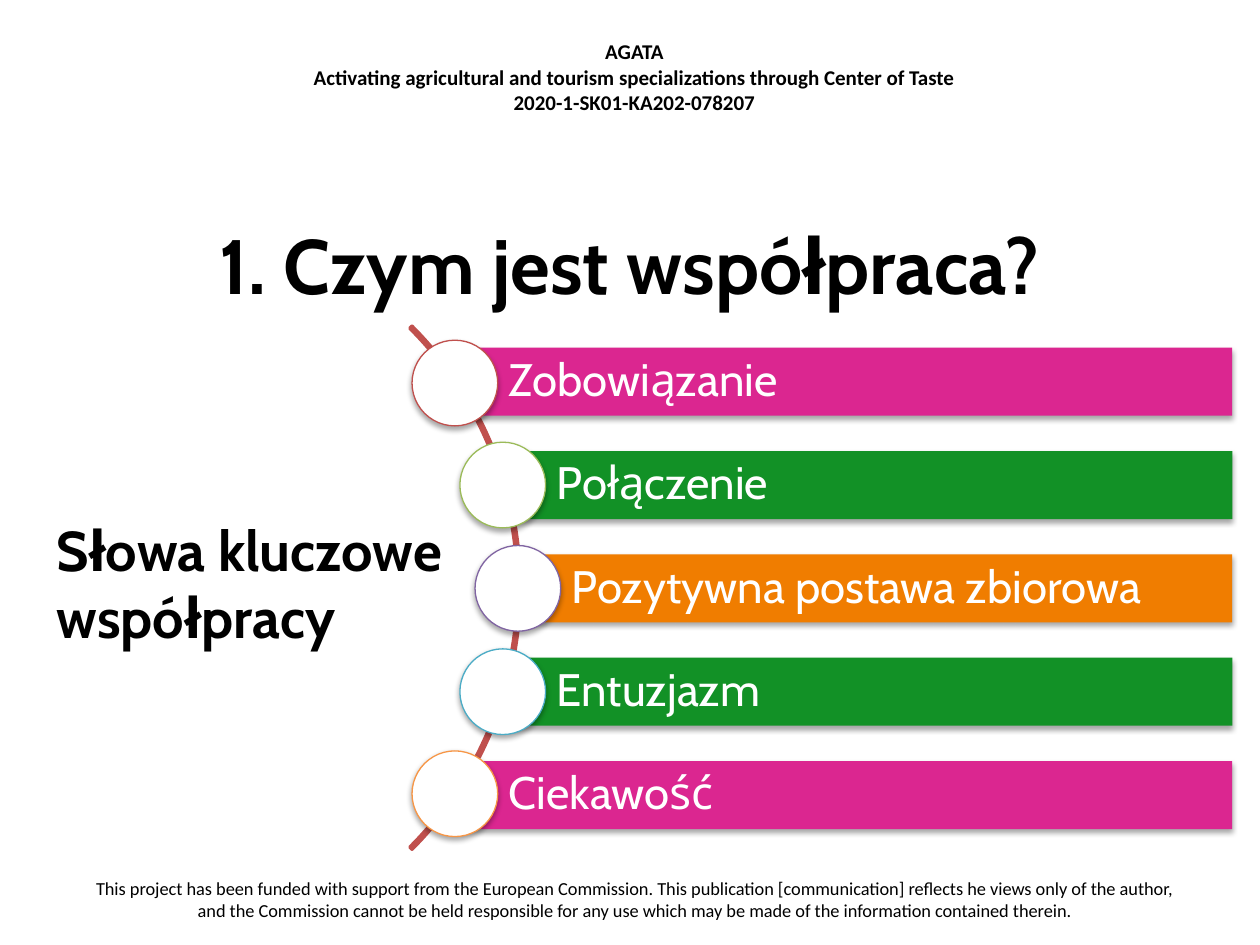
from dataclasses import dataclass
from math import sqrt

from lxml.etree import SubElement
from pptx import Presentation
from pptx.dml.color import RGBColor as Rgb
from pptx.enum.shapes import MSO_SHAPE as Shape
from pptx.enum.text import MSO_ANCHOR as Anchor, PP_ALIGN as Align
from pptx.oxml.ns import qn
from pptx.util import Pt

PX = 9144


@dataclass(frozen=True)
class Theme:
    black: str = "000000"
    white: str = "FFFFFF"
    red: str = "C0504D"
    pink: str = "DB2690"
    green: str = "129126"
    orange: str = "F07D00"
    lime: str = "9BBB59"
    purple: str = "8064A2"
    aqua: str = "4BACC6"
    apricot: str = "F79646"
    heading_font: str = "Cabin"
    project_font: str = "Calibri"
    title: float = 44
    subtitle: float = 32
    keyword: float = 26
    project: float = 12
    funding: float = 10.5


class KeywordSlide:
    def __init__(self, deck, theme):
        self.theme = theme
        self.slide = deck.slides.add_slide(deck.slide_layouts[5])

    def box(self, *lengths):
        return [round(length) * PX for length in lengths]

    def fill_text(self, frame, lines, size, font, color, bold=False,
                  align=Align.LEFT, anchor=Anchor.TOP, spacing=1.0):
        frame.word_wrap = True
        frame.vertical_anchor = anchor
        frame.text = "\n".join(lines)
        style = {"size": Pt(size), "name": font, "bold": bold}
        for paragraph in frame.paragraphs:
            paragraph.alignment = align
            paragraph.line_spacing = spacing
            for key, value in style.items():
                setattr(paragraph.font, key, value)
            paragraph.font.color.rgb = Rgb.from_string(color)

    def title(self, place, text):
        heading = self.slide.shapes.title
        for key, value in zip(("left", "top", "width", "height"), self.box(*place)):
            setattr(heading, key, value)
        self.fill_text(heading.text_frame, [text], self.theme.title,
                       self.theme.heading_font, self.theme.black, True,
                       Align.CENTER, Anchor.MIDDLE)

    def text(self, place, lines, size, font, **style):
        note = self.slide.shapes.add_textbox(*self.box(*place))
        self.fill_text(note.text_frame, lines, size, font, self.theme.black, **style)

    def shape(self, kind, place, fill=None, line=None, weight=0.75):
        figure = self.slide.shapes.add_shape(kind, *self.box(*place))
        figure.shadow.inherit = False
        if fill:
            figure.fill.solid()
            figure.fill.fore_color.rgb = Rgb.from_string(fill)
        else:
            figure.fill.background()
        if line:
            figure.line.color.rgb = Rgb.from_string(line)
            figure.line.width = Pt(weight)
        else:
            figure.line.fill.background()
        return figure

    def shade(self, figure):
        effects = figure.element.spPr.find(qn("a:effectLst"))
        shadow = SubElement(effects, qn("a:outerShdw"), blurRad="40000",
                            dist="23000", dir="5400000", rotWithShape="0")
        color = SubElement(shadow, qn("a:srgbClr"), val=self.theme.black)
        SubElement(color, qn("a:alpha"), val="35000")

    def arc(self, place):
        curve = self.shape(Shape.BLOCK_ARC, place, line=self.theme.red, weight=2)
        for index, value in enumerate((189, 27, 0.004)):
            curve.adjustments[index] = value

    def bar(self, place, text, fill):
        band = self.shape(Shape.RECTANGLE, place, fill)
        self.shade(band)
        margins = {"margin_left": 43, "margin_right": 7,
                   "margin_top": 7, "margin_bottom": 7}
        for key, value in margins.items():
            setattr(band.text_frame, key, value * PX)
        self.fill_text(band.text_frame, [text], self.theme.keyword,
                       self.theme.heading_font, self.theme.white,
                       anchor=Anchor.MIDDLE, spacing=0.9)

    def bead(self, center_x, center_y, size, line):
        place = (center_x - size / 2, center_y - size / 2, size, size)
        self.shade(self.shape(Shape.OVAL, place, self.theme.white, line))


def main():
    deck = Presentation()
    deck.slide_width, deck.slide_height = 1000 * PX, 750 * PX
    theme = Theme()
    page = KeywordSlide(deck, theme)

    page.text((208, 26, 591, 71), [
        "AGATA",
        "Activating agricultural and tourism specializations through Center of Taste",
        "2020-1-SK01-KA202-078207",
    ], theme.project, theme.project_font, bold=True, align=Align.CENTER)
    page.text((54, 691, 900, 47), [
        "This project has been funded with support from the European Commission. "
        "This publication [communication] reflects he views only of the author, "
        "and the Commission cannot be held responsible for any use which may be "
        "made of the information contained therein.",
    ], theme.funding, theme.project_font, align=Align.CENTER)
    page.title((50, 147, 900, 125), "1. Czym jest współpraca?")
    page.text((35, 404, 395, 125), ["Słowa kluczowe współpracy"],
              theme.subtitle, theme.heading_font, bold=True)

    page.arc((-174, 173, 587, 587))
    keywords = [
        ("Zobowiązanie", theme.pink, theme.red),
        ("Połączenie", theme.green, theme.lime),
        ("Pozytywna postawa zbiorowa", theme.orange, theme.purple),
        ("Entuzjazm", theme.green, theme.aqua),
        ("Ciekawość", theme.pink, theme.apricot),
    ]
    arc_x, arc_y, radius = 120, 467, 291
    step, bar_height, bar_right, bead_size = 81.75, 54, 978, 68
    for index, (word, fill, ring) in enumerate(keywords):
        offset = (index - 2) * step
        x = arc_x + sqrt(radius ** 2 - offset ** 2)
        y = arc_y + offset
        page.bar((x, y - bar_height / 2, bar_right - x, bar_height), word, fill)
        page.bead(x, y, bead_size, ring)

    deck.save("out.pptx")


if __name__ == "__main__":
    main()
